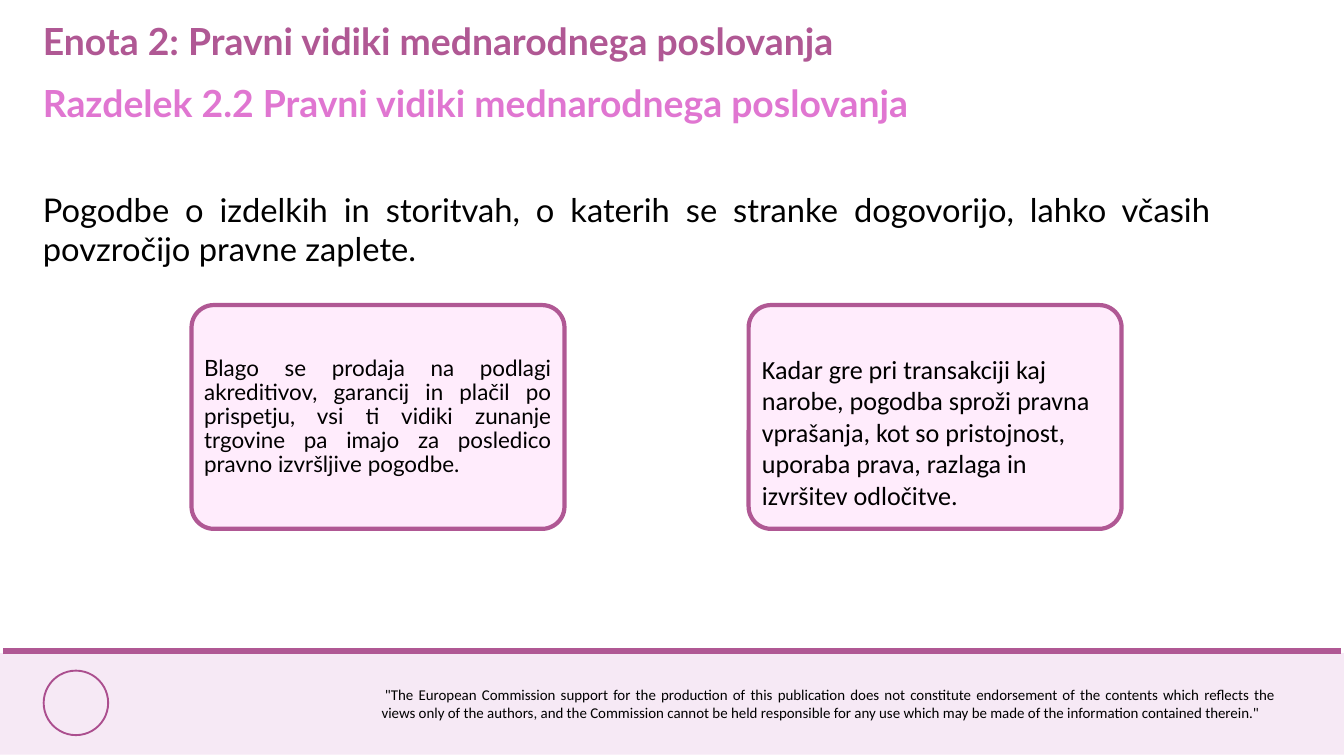
from dataclasses import dataclass

from lxml.etree import SubElement
from pptx import Presentation
from pptx.dml.color import RGBColor
from pptx.enum.shapes import MSO_CONNECTOR, MSO_SHAPE
from pptx.enum.text import MSO_ANCHOR, PP_ALIGN
from pptx.oxml.ns import qn
from pptx.util import Inches, Pt


@dataclass(frozen=True)
class Theme:
    plum: RGBColor = RGBColor(0xB0, 0x58, 0x94)
    orchid: RGBColor = RGBColor(0xE0, 0x76, 0xD1)
    badge: RGBColor = RGBColor(0xAB, 0x4E, 0x8E)
    card: RGBColor = RGBColor(0xFF, 0xEC, 0xFC)
    footer: RGBColor = RGBColor(0xF6, 0xE9, 0xF5)
    black: RGBColor = RGBColor(0, 0, 0)
    heading_size: Pt = Pt(40)
    lead_size: Pt = Pt(35)
    large_card_size: Pt = Pt(28)
    card_size: Pt = Pt(24)
    footer_size: Pt = Pt(16)
    badge_line: Pt = Pt(2)
    card_line: Pt = Pt(4.5)
    rule_line: Pt = Pt(6.75)


def set_attributes(target, values):
    for name, value in values.items():
        setattr(target, name, value)


class SlideBuilder:
    def __init__(self, slide, theme):
        self.slide = slide
        self.theme = theme

    def shape(self, kind, box, fill, line=None, width=None):
        shape = self.slide.shapes.add_shape(kind, *map(Inches, box))
        shape.shadow.inherit = False
        shape.fill.solid()
        shape.fill.fore_color.rgb = fill
        if line is None:
            shape.line.fill.background()
        else:
            shape.line.color.rgb = line
            shape.line.width = width
        return shape

    def band(self, *box):
        self.shape(MSO_SHAPE.RECTANGLE, box, self.theme.footer)

    def badge(self, *box):
        self.shape(MSO_SHAPE.OVAL, box, self.theme.footer,
                   self.theme.badge, self.theme.badge_line)

    def card(self, *box):
        card = self.shape(MSO_SHAPE.ROUNDED_RECTANGLE, box, self.theme.card,
                          self.theme.plum, self.theme.card_line)
        card.adjustments[0] = 0.1

    def rule(self, left, right, y):
        connector = self.slide.shapes.add_connector(
            MSO_CONNECTOR.STRAIGHT, *map(Inches, (left, y, right, y)))
        connector.line.color.rgb = self.theme.plum
        connector.line.width = self.theme.rule_line
        SubElement(connector._element.spPr, qn("a:effectLst"))

    def text(self, box, content, font, paragraph_format=None, frame_format=None):
        frame = self.slide.shapes.add_textbox(*map(Inches, box)).text_frame
        set_attributes(frame, {"word_wrap": True, **(frame_format or {})})
        paragraph = frame.paragraphs[0]
        paragraph.text = content
        set_attributes(paragraph, paragraph_format or {})
        values = {"name": "Lato", **font}
        paragraph.font.color.rgb = values.pop("color", self.theme.black)
        set_attributes(paragraph.font, values)


def main():
    presentation = Presentation()
    presentation.slide_width = Inches(20)
    presentation.slide_height = Inches(11.25)
    slide = presentation.slides.add_slide(presentation.slide_layouts[6])
    theme = Theme()
    builder = SlideBuilder(slide, theme)
    justified = {"alignment": PP_ALIGN.JUSTIFY}

    builder.band(0, 9.72, 20, 1.51)
    builder.rule(0.05, 19.95, 9.69)
    builder.badge(0.65, 9.98, 0.96, 0.96)
    builder.text(
        (5.58, 10.15, 13.5, 0.64),
        "\N{NO-BREAK SPACE}\"The European Commission support for the production of this "
        "publication does not constitute endorsement of the contents which reflects the "
        "views only of the authors, and the Commission cannot be held responsible for any "
        "use which may be made of the information contained therein.\"",
        {"name": "Calibri", "size": theme.footer_size}, justified)

    headings = [
        (0.22, "Enota 2: Pravni vidiki mednarodnega poslovanja", theme.plum),
        (1.14, "Razdelek 2.2 Pravni vidiki mednarodnega poslovanja", theme.orchid),
    ]
    for top, content, color in headings:
        builder.text((0.54, top, 19, 0.77), content,
                     {"size": theme.heading_size, "bold": True, "color": color})
    builder.text(
        (0.54, 2.77, 17.58, 2.96),
        "Pogodbe o izdelkih in storitvah, o katerih se stranke dogovorijo, lahko včasih "
        "povzročijo pravne zaplete.",
        {"size": theme.lead_size}, justified)

    for left in (2.85, 11.14):
        builder.card(left, 4.54, 5.55, 3.33)
    margins = {f"margin_{side}": Inches(0.1) for side in ("left", "top", "right", "bottom")}
    builder.text(
        (2.94, 4.64, 5.36, 3.14),
        "Blago se prodaja na podlagi akreditivov, garancij in plačil po prispetju, vsi ti "
        "vidiki zunanje trgovine pa imajo za posledico pravno izvršljive pogodbe.",
        {"size": theme.card_size}, {**justified, "line_spacing": 0.9},
        {**margins, "vertical_anchor": MSO_ANCHOR.MIDDLE})
    builder.text(
        (11.24, 5.21, 5.36, 2.46),
        "Kadar gre pri transakciji kaj narobe, pogodba sproži pravna vprašanja, kot so "
        "pristojnost, uporaba prava, razlaga in izvršitev odločitve.",
        {"name": "Calibri", "size": theme.large_card_size})

    presentation.save("out.pptx")


if __name__ == "__main__":
    main()
